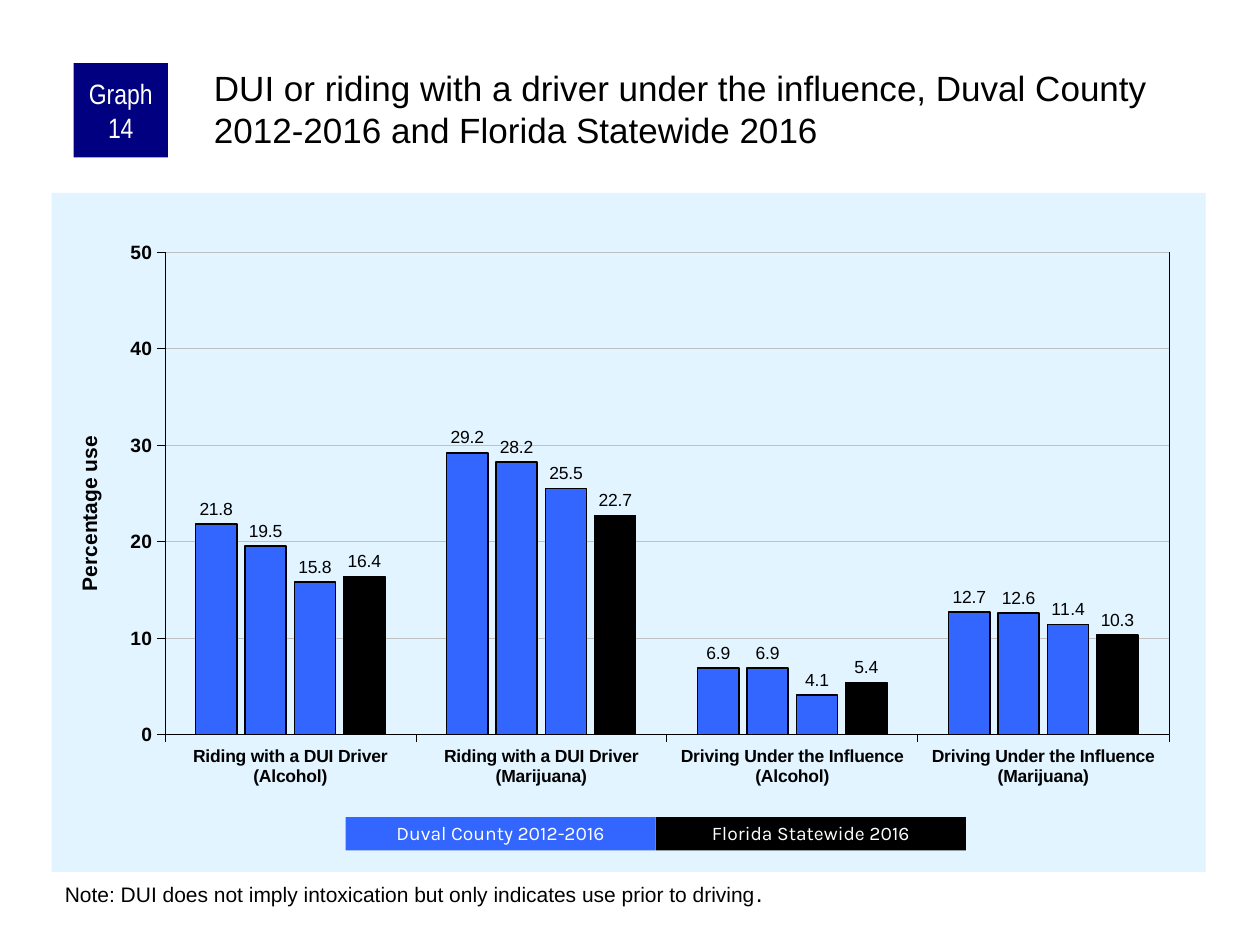
from lxml import etree
from pptx import Presentation
from pptx.chart.data import CategoryChartData
from pptx.dml.color import RGBColor
from pptx.enum.chart import XL_CHART_TYPE as CT, XL_LABEL_POSITION as LP, XL_TICK_MARK as TM
from pptx.enum.shapes import MSO_SHAPE
from pptx.enum.text import MSO_ANCHOR as ANCHOR, MSO_AUTO_SIZE as AUTO, PP_ALIGN as AL
from pptx.oxml import parse_xml
from pptx.util import Pt

COLORS = {
    "black": "000000",
    "white": "FFFFFF",
    "navy": "000080",
    "blue": "3366FF",
    "panel": "E1F4FF",
    "grid": "C0C0C0",
}
NS = ('xmlns:c="http://schemas.openxmlformats.org/drawingml/2006/chart" '
      'xmlns:a="http://schemas.openxmlformats.org/drawingml/2006/main"')


def rgb(name):
    return RGBColor.from_string(COLORS[name])


def set_font(font, size, color="black", name="Arial", bold=False):
    font.size = Pt(size)
    font.name = name
    font.bold = bold
    font.color.rgb = rgb(color)


prs = Presentation()
prs.slide_width, prs.slide_height = Pt(720), Pt(540)
s = prs.slides.add_slide(prs.slide_layouts[5])

title = s.shapes.title
title.left, title.top, title.width, title.height = Pt(120), Pt(36), Pt(570), Pt(60)
tf = title.text_frame
tf.text = ("DUI or riding with a driver under the influence, Duval County "
           "2012-2016 and Florida Statewide 2016")
tf.word_wrap = True
tf.auto_size = AUTO.NONE
tf.vertical_anchor = ANCHOR.TOP
tf.margin_left = tf.margin_top = Pt(2.25)
tf.margin_right = tf.margin_bottom = 0
p = tf.paragraphs[0]
p.alignment = AL.LEFT
set_font(p.font, 20)

data = CategoryChartData(number_format="0.0")
data.categories = [
    "Riding with a DUI Driver (Alcohol)",
    "Riding with a DUI Driver (Marijuana)",
    "Driving Under the Influence (Alcohol)",
    "Driving Under the Influence (Marijuana)",
]
data.add_series("Series 1", (21.8, 29.2, 6.9, 12.7))
data.add_series("Series 2", (19.5, 28.2, 6.9, 12.6))
data.add_series("Series 3", (15.8, 25.5, 4.1, 11.4))
data.add_series("Series 4", (16.4, 22.7, 5.4, 10.3))
chart = s.shapes.add_chart(CT.COLUMN_CLUSTERED, Pt(29.5), Pt(110.2),
                           Pt(659.5), Pt(388), data).chart
chart.has_title = False
chart.has_legend = False
set_font(chart.font, 11.5)

plot = chart.plots[0]
plot.gap_width = 150
plot.overlap = -20
plot.vary_by_categories = False
styles = [("blue", 1), ("blue", 1), ("blue", 0.75), ("black", 0.75)]
for series, (color, width) in zip(plot.series, styles):
    series.format.fill.solid()
    series.format.fill.fore_color.rgb = rgb(color)
    series.format.line.color.rgb = rgb("black")
    series.format.line.width = Pt(width)
    labels = series.data_labels
    labels.show_value = True
    labels.number_format = "0.0"
    labels.number_format_is_linked = False
    labels.position = LP.OUTSIDE_END
    set_font(labels.font, 10)

for axis, size in ((chart.category_axis, 10), (chart.value_axis, 11)):
    axis.major_tick_mark = TM.OUTSIDE
    axis.minor_tick_mark = TM.NONE
    axis.format.line.color.rgb = rgb("black")
    axis.format.line.width = Pt(0.25)
    set_font(axis.tick_labels.font, size, bold=True)

axis = chart.value_axis
axis.minimum_scale, axis.maximum_scale, axis.major_unit = 0, 50, 10
axis.tick_labels.number_format = "0"
axis.tick_labels.number_format_is_linked = False
axis.major_gridlines.format.line.color.rgb = rgb("grid")
axis.major_gridlines.format.line.width = Pt(0.25)
tf = axis.axis_title.text_frame
tf.text = "Percentage use"
set_font(tf.paragraphs[0].font, 12, bold=True)

chart_el = chart.element.find("{*}chart")
chart_el.addnext(parse_xml(
    f'<c:spPr {NS}><a:solidFill><a:srgbClr val="{COLORS["panel"]}"/></a:solidFill>'
    '<a:ln><a:noFill/></a:ln></c:spPr>'))
area = chart_el.find("{*}plotArea")
for old in area.findall("{*}layout"):
    area.remove(old)
layout = parse_xml(f'<c:layout {NS}><c:manualLayout><c:layoutTarget val="inner"/>'
                   '<c:xMode val="edge"/><c:yMode val="edge"/></c:manualLayout></c:layout>')
for tag, value in (("x", 0.098), ("y", 0.087), ("w", 0.87), ("h", 0.711)):
    item = etree.SubElement(layout[0], layout.tag.replace("layout", tag))
    item.set("val", str(value))
area.insert(0, layout)
area.append(parse_xml(
    f'<c:spPr {NS}><a:noFill/><a:ln w="3175"><a:solidFill>'
    f'<a:srgbClr val="{COLORS["black"]}"/></a:solidFill></a:ln></c:spPr>'))

boxes = [
    ("Graph 14", 42, 36, 54, 54, "navy", "Arial Narrow", 16, 3.6, 1),
    ("Duval County 2012-2016", 197.5, 467, 177.25, 19, "blue", "Karla", 11, 7.2, 0.9),
    ("Florida Statewide 2016", 374.75, 467, 177.25, 19, "black", "Karla", 11, 7.2, 0.9),
]
for text, x, y, w, h, color, face, size, inset, spacing in boxes:
    sp = s.shapes.add_shape(MSO_SHAPE.RECTANGLE, Pt(x), Pt(y), Pt(w), Pt(h))
    sp.shadow.inherit = False
    sp.fill.solid()
    sp.fill.fore_color.rgb = rgb(color)
    sp.line.fill.background()
    tf = sp.text_frame
    tf.word_wrap = True
    tf.vertical_anchor = ANCHOR.MIDDLE
    tf.margin_left = tf.margin_right = Pt(inset)
    tf.margin_top = tf.margin_bottom = 0
    p = tf.paragraphs[0]
    p.text = text
    p.alignment = AL.CENTER
    p.line_spacing = spacing
    set_font(p.font, size, "white", face)

tf = s.shapes.add_textbox(Pt(30), Pt(498), Pt(660), Pt(24.5)).text_frame
tf.word_wrap = True
tf.auto_size = AUTO.SHAPE_TO_FIT_TEXT
p = tf.paragraphs[0]
for text, size in (
    ("Note: DUI does not imply intoxication but only indicates use prior to driving", 12),
    (".", 14),
):
    r = p.add_run()
    r.text = text
    set_font(r.font, size)

prs.save("out.pptx")
